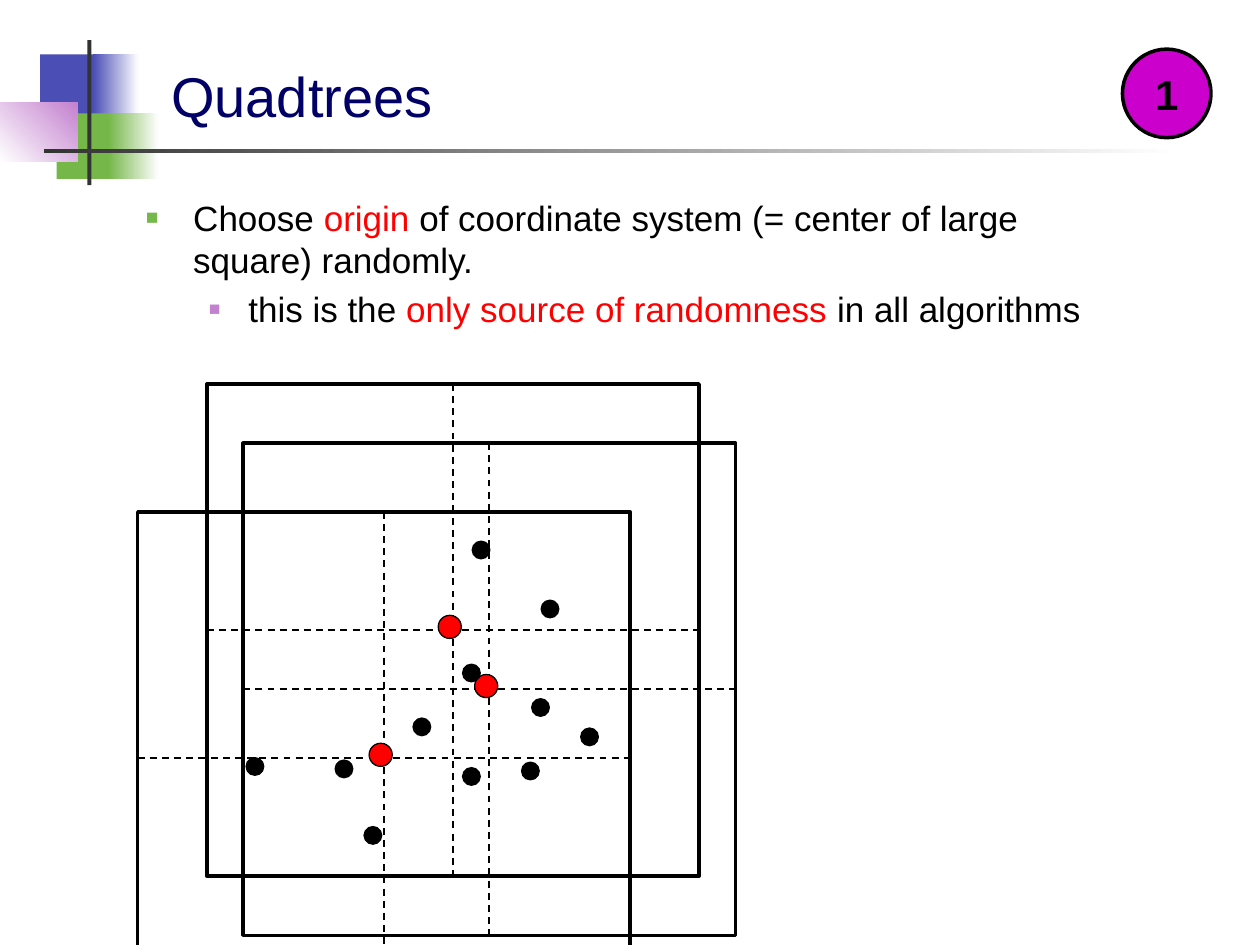
from typing import NamedTuple, Optional

from lxml.etree import SubElement
from pptx import Presentation
from pptx.dml.color import RGBColor
from pptx.enum.dml import MSO_LINE
from pptx.enum.shapes import MSO_CONNECTOR as Connector, MSO_SHAPE as Shape
from pptx.enum.text import MSO_ANCHOR as Anchor, PP_ALIGN as Align
from pptx.oxml.ns import qn
from pptx.util import Pt

COLORS = {
    "blue": "4B4EB5", "green": "76B749", "pink": "C481CF", "dark": "333333",
    "white": "FFFFFF", "black": "000000", "red": "FF0000",
    "navy": "000066", "magenta": "CC00CC",
}
FONT = "Arial"
SQUARE_SIDE = 281.3
ORIGIN_SIZE, ORIGIN_SHIFT = 13.2, -1.8
POINT_SIZE = 10.1


class Block(NamedTuple):
    left: float
    top: float
    width: float
    height: float
    color: str
    fade_to: Optional[str] = None
    angle: float = 0


class Bullet(NamedTuple):
    runs: list[tuple[str, str]]
    color: str
    size: int
    margin: float
    hang: float
    gap: float


class Point(NamedTuple):
    x: float
    y: float


DECORATION = [
    Block(23, 31, 34.6, 37.4, "blue"),
    Block(53.3, 31, 25.9, 37.4, "blue", "white"),
    Block(32.4, 64.8, 33.1, 37.4, "green"),
    Block(61.9, 64.8, 28.8, 37.4, "green", "white"),
    Block(0, 58.7, 44.3, 33.4, "white", "pink", 45),
    Block(49.9, 23, 2.3, 82.8, "dark"),
    Block(25.2, 85, 648, 2.3, "dark", "white"),
]
BULLETS = [
    Bullet([("Choose ", "black"), ("origin", "red"),
            (" of coordinate system (= center of large square) randomly.", "black")],
           "green", 60, 27, 27, 0),
    Bullet([("this is the ", "black"), ("only source of randomness ", "red"),
            ("in all algorithms", "black")],
           "pink", 55, 58.5, 22.5, 4),
]
# Top left corners of the randomly shifted squares
SQUARES = [Point(139, 253.2), Point(78.7, 292.5), Point(118.2, 219.4)]
# Centres of the input points
INPUT_POINTS = [
    Point(213.1, 477.4), Point(336.9, 421.1), Point(269.4, 384.6), Point(269.4, 443.7),
    Point(303.1, 440.6), Point(241.1, 415.4), Point(314.3, 348), Point(145.7, 438),
    Point(274.9, 314.3), Point(308.9, 404.3), Point(196.6, 439.4),
]


def rgb(name: str) -> RGBColor:
    return RGBColor.from_string(COLORS[name])


def add_shape(kind, left: float, top: float, width: float, height: float,
              fill: Optional[str] = None, line: Optional[str] = None,
              line_width: float = 0.75):
    shape = slide.shapes.add_shape(kind, Pt(left), Pt(top), Pt(width), Pt(height))
    shape.shadow.inherit = False
    if fill:
        shape.fill.solid()
        shape.fill.fore_color.rgb = rgb(fill)
    else:
        shape.fill.background()
    if line:
        shape.line.color.rgb = rgb(line)
        shape.line.width = Pt(line_width)
    else:
        shape.line.fill.background()
    return shape


def add_block(block: Block) -> None:
    shape = add_shape(Shape.RECTANGLE, *block[:4], fill=block.color)
    if block.fade_to:
        shape.fill.gradient()
        shape.fill.gradient_angle = block.angle
        for stop, color in zip(shape.fill.gradient_stops, (block.color, block.fade_to)):
            stop.color.rgb = rgb(color)


def add_dot(center: Point, size: float, fill: str) -> None:
    add_shape(Shape.OVAL, center.x - size / 2, center.y - size / 2, size, size, fill, "black")


def add_axis(square, start_side: int, end_side: int) -> None:
    axis = slide.shapes.add_connector(Connector.STRAIGHT, 0, 0, 0, 0)
    axis.begin_connect(square, start_side)
    axis.end_connect(square, end_side)
    axis.line.color.rgb = rgb("black")
    axis.line.width = Pt(1)
    axis.line.dash_style = MSO_LINE.DASH
    SubElement(axis.element.spPr, qn("a:effectLst"))


def add_square(corner: Point) -> None:
    square = add_shape(Shape.RECTANGLE, *corner, SQUARE_SIDE, SQUARE_SIDE,
                       line="black", line_width=2)
    add_axis(square, 0, 2)
    add_axis(square, 1, 3)
    to_origin = SQUARE_SIDE / 2 + ORIGIN_SHIFT
    add_dot(Point(corner.x + to_origin, corner.y + to_origin), ORIGIN_SIZE, "red")


def add_text_frame(left: float, top: float, width: float, height: float):
    frame = slide.shapes.add_textbox(Pt(left), Pt(top), Pt(width), Pt(height)).text_frame
    frame.word_wrap = True
    return frame


def set_font(paragraph, size: float, color: Optional[str] = None, bold: bool = False) -> None:
    paragraph.font.name = FONT
    paragraph.font.size = Pt(size)
    paragraph.font.bold = bold
    if color:
        paragraph.font.color.rgb = rgb(color)


def write_bullet(paragraph, bullet: Bullet) -> None:
    set_font(paragraph, 20)
    paragraph.line_spacing = Pt(24)
    paragraph.space_before = Pt(bullet.gap)
    for text, color in bullet.runs:
        run = paragraph.add_run()
        run.text = text
        run.font.color.rgb = rgb(color)
    props = paragraph._p.get_or_add_pPr()
    props.set("marL", str(Pt(bullet.margin)))
    props.set("indent", str(-Pt(bullet.hang)))
    marks = [SubElement(props, qn(tag)) for tag in ("a:buClr", "a:buSzPct", "a:buFont", "a:buChar")]
    SubElement(marks[0], qn("a:srgbClr")).set("val", COLORS[bullet.color])
    marks[1].set("val", str(bullet.size * 1000))
    marks[2].set("typeface", FONT)
    marks[3].set("char", "■")
    # The schema wants the default run properties after the bullet
    props.append(props.find(qn("a:defRPr")))


deck = Presentation()
deck.slide_width, deck.slide_height = Pt(720), Pt(540)
slide = deck.slides.add_slide(deck.slide_layouts[6])

# Corner decoration and rule
for block in DECORATION:
    add_block(block)

# Title
title = add_text_frame(90.7, 16.6, 613.4, 60.5)
title.vertical_anchor = Anchor.BOTTOM
title.text = "Quadtrees"
set_font(title.paragraphs[0], 32, "navy")

# Bullets
body = add_text_frame(76.3, 108.7, 567.4, 100)
for index, bullet in enumerate(BULLETS):
    write_bullet(body.add_paragraph() if index else body.paragraphs[0], bullet)

# Step number
step = add_shape(Shape.OVAL, 641.4, 28.1, 50.6, 50.6, "magenta", "black", 2).text_frame
step.vertical_anchor = Anchor.MIDDLE
step.text = "1"
step.paragraphs[0].alignment = Align.CENTER
set_font(step.paragraphs[0], 24, "black", bold=True)

# Shifted squares with their axes and origins
for corner in SQUARES:
    add_square(corner)

# Input points
for center in INPUT_POINTS:
    add_dot(center, POINT_SIZE, "black")

deck.save("out.pptx")
